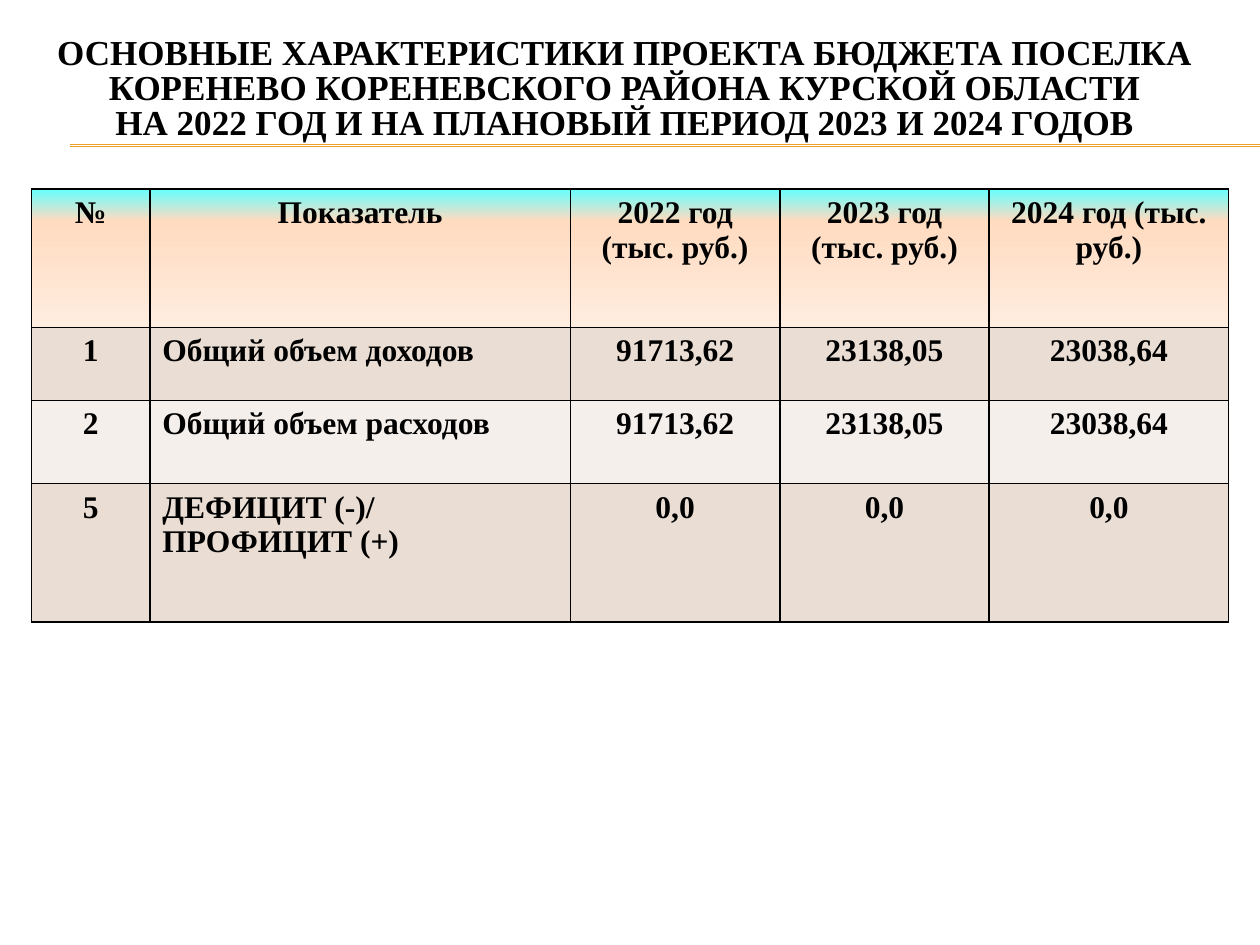
from lxml import etree
from pptx import Presentation
from pptx.dml.color import RGBColor
from pptx.enum.shapes import MSO_CONNECTOR
from pptx.enum.text import MSO_ANCHOR, PP_ALIGN
from pptx.oxml.ns import qn
from pptx.util import Cm, Pt

LINE = MSO_CONNECTOR.STRAIGHT
TOP = MSO_ANCHOR.TOP
LEFT, MID = PP_ALIGN.LEFT, PP_ALIGN.CENTER

FONT = "Times New Roman"
COLORS = {
    "text": "000000",
    "rule": "F0A22E",
    "odd": "E9DDD4",
    "even": "F5EFEB",
}
HEAD_STOPS = [(0, "66FFFF"), (23, "FFDBC0"), (100, "FFEDE0")]

TITLE = (
    "ОСНОВНЫЕ ХАРАКТЕРИСТИКИ ПРОЕКТА БЮДЖЕТА ПОСЕЛКА "
    "КОРЕНЕВО КОРЕНЕВСКОГО РАЙОНА КУРСКОЙ ОБЛАСТИ\v"
    "НА 2022 ГОД И НА ПЛАНОВЫЙ ПЕРИОД 2023 И 2024 ГОДОВ"
)
ROWS = [
    ["№", "Показатель", "2022 год (тыс. руб.)", "2023 год (тыс. руб.)",
     "2024 год (тыс. руб.)"],
    ["1", "Общий объем доходов", "91713,62", "23138,05", "23038,64"],
    ["2", "Общий объем расходов", "91713,62", "23138,05", "23038,64"],
    ["5", "ДЕФИЦИТ (-)/\nПРОФИЦИТ (+)", "0,0", "0,0", "0,0"],
]
WIDTHS = [2.38, 8.48, 4.22, 4.22, 4.83]
HEIGHTS = [2.79, 1.47, 1.68, 2.79]


def style(para, size, align):
    para.alignment = align
    font = para.font
    font.name, font.size, font.bold = FONT, Pt(size), True
    font.color.rgb = RGBColor.from_string(COLORS["text"])


def add_rule(slide, y):
    rule = slide.shapes.add_connector(LINE, Cm(1.42), Cm(y), Cm(25.4), Cm(y))
    rule.line.color.rgb = RGBColor.from_string(COLORS["rule"])
    rule.line.width = Pt(0.75)
    etree.SubElement(rule.element.spPr, qn("a:effectLst"))


def add_title(slide):
    box = slide.shapes.add_textbox(Cm(0.84), Cm(0.64), Cm(23.5), Cm(2.97))
    frame = box.text_frame
    frame.word_wrap = True
    frame.vertical_anchor = TOP
    para = frame.paragraphs[0]
    para.text = TITLE
    para.line_spacing = 0.83
    style(para, 20, MID)


def add_color(parent, color):
    etree.SubElement(parent, qn("a:srgbClr"), val=color)


def add_borders(cell):
    """Draw all four sides; call before the fill, which must follow them."""
    props = cell._tc.get_or_add_tcPr()
    for side in ("lnL", "lnR", "lnT", "lnB"):
        line = etree.SubElement(props, qn(f"a:{side}"), w=str(Pt(1)))
        add_color(etree.SubElement(line, qn("a:solidFill")), COLORS["text"])


def fill_head(cell):
    """Fill with a three-stop gradient running downwards."""
    grad = etree.SubElement(cell._tc.get_or_add_tcPr(), qn("a:gradFill"))
    stops = etree.SubElement(grad, qn("a:gsLst"))
    for place, color in HEAD_STOPS:
        add_color(etree.SubElement(stops, qn("a:gs"), pos=str(place * 1000)),
                  color)
    etree.SubElement(grad, qn("a:lin"), ang="5400000", scaled="0")


def fill_cell(cell, row, col, text):
    cell.text = text
    for para in cell.text_frame.paragraphs:
        style(para, 18, LEFT if row and col == 1 else MID)
    add_borders(cell)
    if row == 0:
        fill_head(cell)
    else:
        cell.fill.solid()
        shade = COLORS["odd" if row % 2 else "even"]
        cell.fill.fore_color.rgb = RGBColor.from_string(shade)


def add_budget(slide):
    table = slide.shapes.add_table(
        len(ROWS), len(WIDTHS), Cm(0.64), Cm(3.81),
        Cm(sum(WIDTHS)), Cm(sum(HEIGHTS))).table
    for column, width in zip(table.columns, WIDTHS):
        column.width = Cm(width)
    for line, height in zip(table.rows, HEIGHTS):
        line.height = Cm(height)
    for row, texts in enumerate(ROWS):
        for col, text in enumerate(texts):
            fill_cell(table.cell(row, col), row, col, text)


def main():
    deck = Presentation()
    deck.slide_width, deck.slide_height = Cm(25.4), Cm(19.05)
    slide = deck.slides.add_slide(deck.slide_layouts[6])
    for y in (2.92, 2.95):
        add_rule(slide, y)
    add_title(slide)
    add_budget(slide)
    deck.save("out.pptx")


if __name__ == "__main__":
    main()
